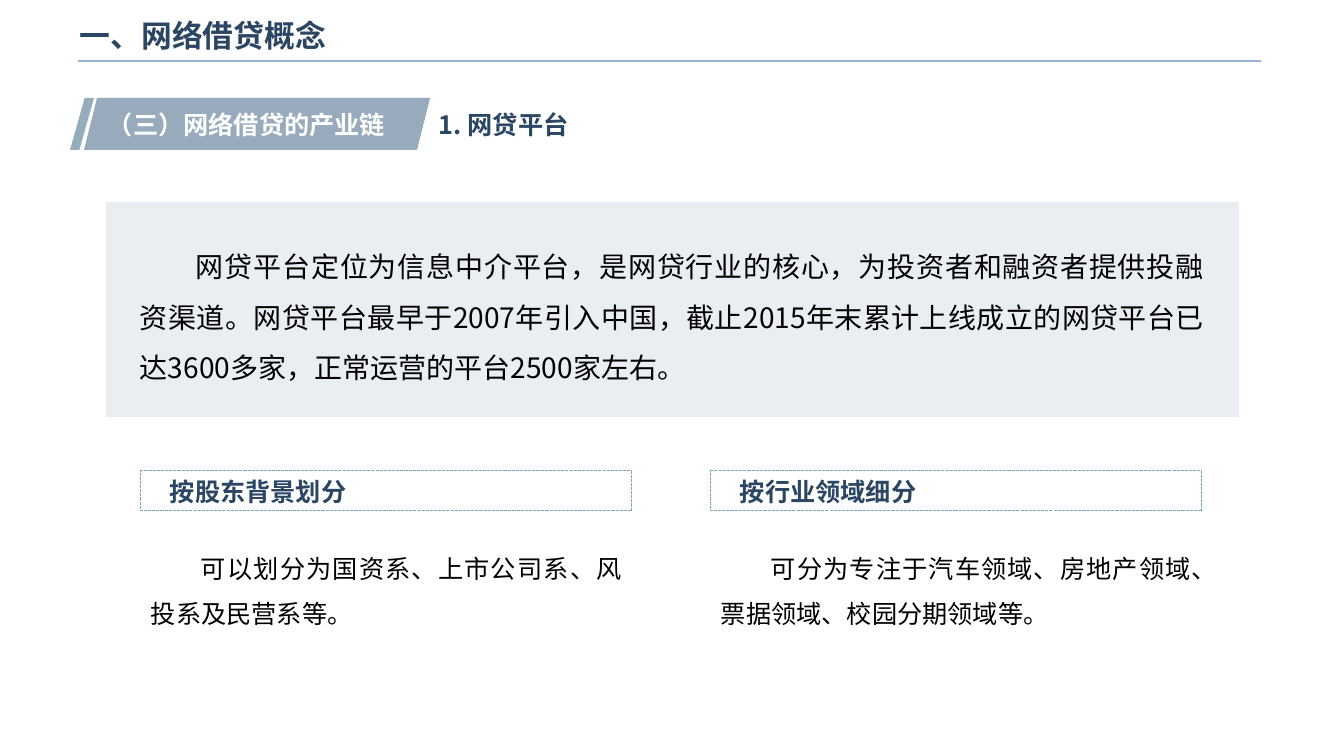
import lxml.etree
import pptx
import pptx.dml.color
import pptx.enum.dml
import pptx.enum.shapes
import pptx.enum.text
import pptx.oxml.ns
import pptx.util

PX = 914400 / 100.8
CJK = "Noto Sans CJK SC"
COLORS = {
    "navy": "2B4663", "rule": "98B4D2", "panel": "EAEEF2", "stripe": "94ACBC",
    "banner": "97ABBD", "frame": "7AA6B8", "white": "FFFFFF", "black": "000000",
}

TITLE = "一、网络借贷概念"
SECTION = "（三）网络借贷的产业链"
TOPIC = "1. 网贷平台"
INTRO = ("网贷平台定位为信息中介平台，是网贷行业的核心，为投资者和融资者提供投融资渠道。"
         "网贷平台最早于2007年引入中国，截止2015年末累计上线成立的网贷平台已达3600多家，"
         "正常运营的平台2500家左右。")
CATEGORIES = [
    ("按股东背景划分", "可以划分为国资系、上市公司系、风投系及民营系等。"),
    ("按行业领域细分", "可分为专注于汽车领域、房地产领域、票据领域、校园分期领域等。"),
]
COLUMN_LEFT, COLUMN_STEP, COLUMN_WIDTH = 141, 570, 491

SHAPES = pptx.enum.shapes.MSO_SHAPE
ANCHOR = pptx.enum.text.MSO_ANCHOR
ALIGN = pptx.enum.text.PP_ALIGN
BODY = {"line_spacing": 1.5, "space_after": pptx.util.Pt(10), "alignment": ALIGN.JUSTIFY}


def px(*lengths):
    return [pptx.util.Emu(round(length * PX)) for length in lengths]


def rgb(name):
    return pptx.dml.color.RGBColor.from_string(COLORS[name])


def write(holder, words, size, color, bold=False, font=CJK, anchor=ANCHOR.TOP,
          margin=0, indent=0, layout=None):
    """Fill a shape's text frame with one formatted paragraph."""
    frame = holder.text_frame
    frame.word_wrap = True
    frame.vertical_anchor = anchor
    paragraph = frame.paragraphs[0]
    for key, value in {"alignment": ALIGN.LEFT, **(layout or {})}.items():
        setattr(paragraph, key, value)
    properties = paragraph._p.get_or_add_pPr()
    for key, value in {"marL": margin, "indent": indent}.items():
        properties.set(key, str(px(value)[0]))
    run = paragraph.add_run()
    run.text = words
    for key, value in {"size": pptx.util.Pt(size), "bold": bold, "name": font}.items():
        setattr(run.font, key, value)
    run.font.color.rgb = rgb(color)
    east_asian = lxml.etree.Element(pptx.oxml.ns.qn("a:ea"), typeface=CJK)
    run.font._element.find(pptx.oxml.ns.qn("a:latin")).addnext(east_asian)


def add_text(slide, box, words, size, color, **style):
    write(slide.shapes.add_textbox(*px(*box)), words, size, color, **style)


def add_block(slide, kind, box, fill=None, slant=None):
    block = slide.shapes.add_shape(kind, *px(*box))
    block.shadow.inherit = False
    block.line.fill.background()
    if fill:
        block.fill.solid()
        block.fill.fore_color.rgb = rgb(fill)
    else:
        block.fill.background()
    if slant is not None:
        block.adjustments[0] = slant
    return block


def add_rule(slide, left, right, y):
    rule = slide.shapes.add_connector(
        pptx.enum.shapes.MSO_CONNECTOR.STRAIGHT, *px(left, y, right, y))
    rule.line.color.rgb = rgb("rule")
    rule.line.width = pptx.util.Pt(1)
    lxml.etree.SubElement(rule._element.spPr, pptx.oxml.ns.qn("a:effectLst"))


def add_category(slide, left, heading, detail):
    add_text(slide, (left, 533, COLUMN_WIDTH, 102), detail, 18, "black",
             indent=50, layout=BODY)
    frame = add_block(slide, SHAPES.RECTANGLE, (left, 471, COLUMN_WIDTH, 40))
    frame.line.color.rgb = rgb("frame")
    frame.line.width = pptx.util.Pt(0.75)
    frame.line.dash_style = pptx.enum.dml.MSO_LINE.SQUARE_DOT
    write(frame, heading, 18, "navy", bold=True, margin=19)


def main():
    deck = pptx.Presentation()
    deck.slide_width, deck.slide_height = px(1344, 756)
    slide = deck.slides.add_slide(deck.slide_layouts[6])

    add_rule(slide, 78, 1261, 61)
    add_block(slide, SHAPES.RECTANGLE, (106, 202, 1133, 215), "panel")
    add_text(slide, (70, 9, 1080, 53), TITLE, 22, "navy", bold=True,
             font="Arial", anchor=ANCHOR.MIDDLE)

    add_block(slide, SHAPES.PARALLELOGRAM, (70, 98, 24, 52), "stripe", 0.61)
    add_block(slide, SHAPES.PARALLELOGRAM, (84, 98, 346, 52), "banner", 0.25)
    add_text(slide, (98, 104, 320, 40), SECTION, 18, "white", bold=True)
    add_text(slide, (429, 104, 383, 40), TOPIC, 18, "navy", bold=True)

    add_text(slide, (130, 228, 1084, 162), INTRO, 20, "black", indent=56, layout=BODY)
    for index, (heading, detail) in enumerate(CATEGORIES):
        add_category(slide, COLUMN_LEFT + index * COLUMN_STEP, heading, detail)

    deck.save("out.pptx")


if __name__ == "__main__":
    main()
